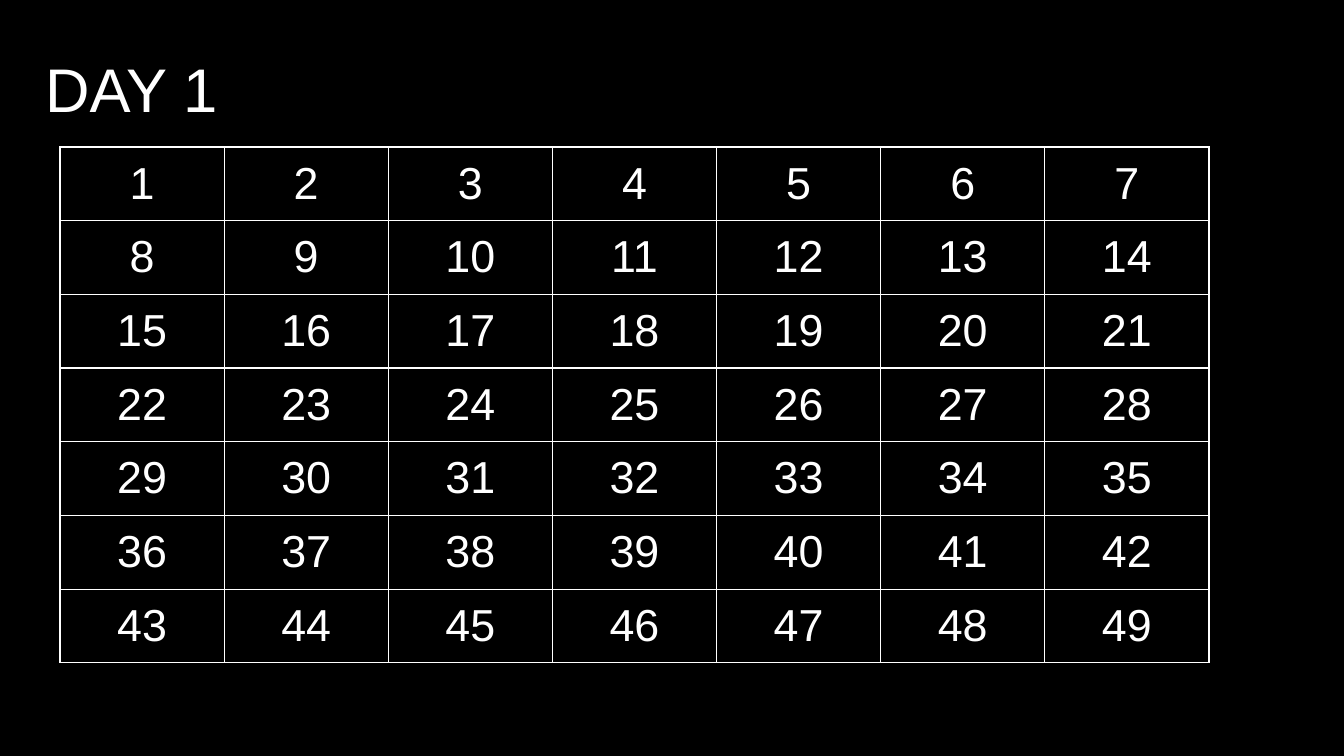
from dataclasses import dataclass

from pptx import Presentation
from pptx.dml.color import RGBColor as RGB
from pptx.enum.text import MSO_ANCHOR as Anchor, PP_ALIGN as Align
from pptx.oxml import parse_xml
from pptx.oxml.ns import nsdecls
from pptx.util import Emu, Pt


@dataclass(frozen=True)
class Theme:
    """Colours, font and type sizes of the slide."""
    back: str = "000000"
    ink: str = "FFFFFF"
    font: str = "Arial"
    title_size: int = 44
    cell_size: int = 32
    border: int = 1


def px(n):
    """Turn pixels into EMU."""
    return Emu(round(n * 914400 / 100.8))


def write(tf, text, *, size, color, font, align=Align.LEFT, line=None, after=None):
    """Put one formatted paragraph in a text frame."""
    p = tf.paragraphs[0]
    p.alignment = align
    p.line_spacing = line
    p.space_after = after
    r = p.add_run()
    r.text = text
    r.font.size = Pt(size)
    r.font.name = font
    r.font.color.rgb = RGB.from_string(color)


class Deck:
    """Holds the theme and the current slide."""

    def __init__(self, prs, theme):
        """Add a title-only slide with a plain background."""
        self.theme = theme
        self.s = prs.slides.add_slide(prs.slide_layouts[5])
        fill = self.s.background.fill
        fill.solid()
        fill.fore_color.rgb = RGB.from_string(theme.back)

    def title(self, text, x, y, w, h):
        """Place and fill the title placeholder."""
        sp = self.s.shapes.title
        sp.left, sp.top, sp.width, sp.height = map(px, (x, y, w, h))
        tf = sp.text_frame
        tf.word_wrap = True
        tf.vertical_anchor = Anchor.MIDDLE
        write(tf, text, size=self.theme.title_size, color=self.theme.ink,
              font=self.theme.font)

    def borders(self, cell):
        """Draw a line on each side of a cell."""
        tc_pr = cell._tc.get_or_add_tcPr()
        for side in "LRTB":
            tc_pr.append(parse_xml(
                f'<a:ln{side} {nsdecls("a")} w="{Pt(self.theme.border)}">'
                f'<a:solidFill><a:srgbClr val="{self.theme.ink}"/></a:solidFill>'
                f'</a:ln{side}>'))

    def number_grid(self, rows, cols, x, y, w, h):
        """Add a table that counts up row by row."""
        table = self.s.shapes.add_table(rows, cols, *map(px, (x, y, w, h))).table
        table.first_row = table.horz_banding = False
        for i, cell in enumerate(table.iter_cells(), 1):
            self.borders(cell)
            cell.fill.background()
            cell.margin_left = cell.margin_right = px(2)
            cell.margin_top = cell.margin_bottom = px(2)
            write(cell.text_frame, str(i), size=self.theme.cell_size,
                  color=self.theme.ink, font=self.theme.font,
                  align=Align.CENTER, line=1.19, after=Pt(6))


def main():
    """Build and save the slide."""
    prs = Presentation()
    prs.slide_width, prs.slide_height = px(1344), px(756)
    deck = Deck(prs, Theme())
    deck.title("DAY 1", 35, 15, 1159, 146)
    deck.number_grid(7, 7, 60, 147, 1149, 516)
    prs.save("out.pptx")


if __name__ == "__main__":
    main()
